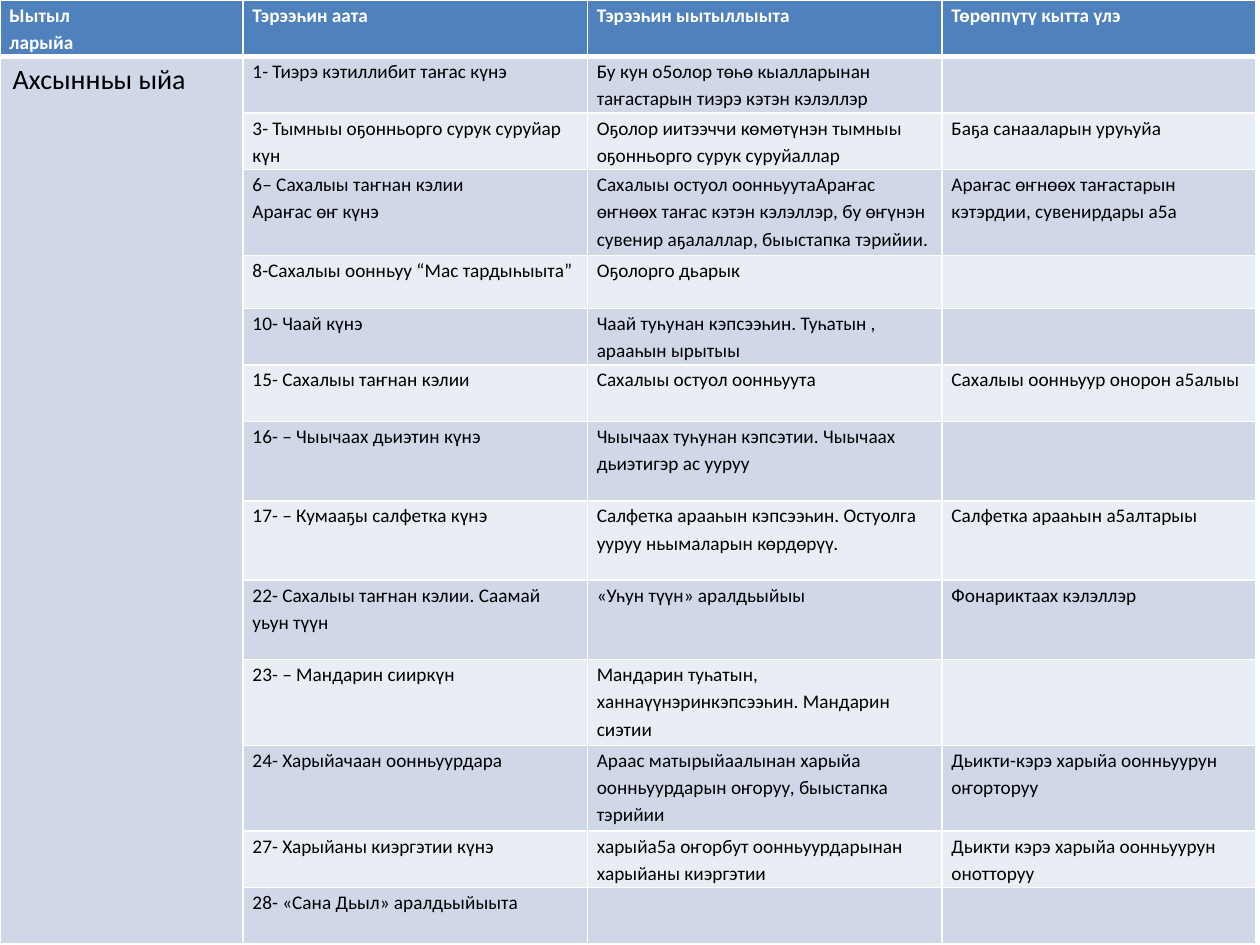
import pptx
import pptx.util
import pptx.dml.color
from lxml import etree
from pptx.oxml.ns import qn

Cm, Pt = pptx.util.Cm, pptx.util.Pt
RGB = pptx.dml.color.RGBColor

BLUE = RGB(0x4F, 0x81, 0xBD)
DARK = RGB(0xD0, 0xD8, 0xE8)
LIGHT = RGB(0xE9, 0xED, 0xF4)
WHITE = RGB(0xFF, 0xFF, 0xFF)
BLACK = RGB(0, 0, 0)

HEAD = ["Ыытыл\nларыйа", "Тэрээһин аата", "Тэрээһин ыытыллыыта", "Төрөппүтү кытта үлэ"]
MONTH = "Ахсынньы ыйа"
# name of the event, how it is held, work with parents
EVENTS = [
    ("1- Тиэрэ кэтиллибит таҥас күнэ",
     "Бу кун о5олор төһө кыалларынан таҥастарын тиэрэ кэтэн кэлэллэр", ""),
    ("3- Тымныы оҕонньорго сурук суруйар күн",
     "Оҕолор иитээччи көмөтүнэн тымныы оҕонньорго сурук суруйаллар",
     "Баҕа санааларын уруһуйа"),
    ("6– Сахалыы таҥнан кэлии\nАраҥас өҥ күнэ",
     "Сахалыы остуол оонньуутаАраҥас өҥнөөх таҥас кэтэн кэлэллэр, "
     "бу өҥүнэн сувенир аҕалаллар, быыстапка тэрийии.",
     "Араҥас өҥнөөх таҥастарын кэтэрдии, сувенирдары а5а"),
    ("8-Сахалыы оонньуу “Мас тардыһыыта”", "Оҕолорго дьарык", ""),
    ("10- Чаай күнэ", "Чаай туһунан кэпсээһин. Туһатын , арааһын ырытыы", ""),
    ("15- Сахалыы таҥнан кэлии", "Сахалыы остуол оонньуута",
     "Сахалыы оонньуур онорон а5алыы"),
    ("16- – Чыычаах дьиэтин күнэ",
     "Чыычаах туһунан кэпсэтии. Чыычаах дьиэтигэр ас ууруу", ""),
    ("17- – Кумааҕы салфетка күнэ",
     "Салфетка арааһын кэпсээһин. Остуолга ууруу ньымаларын көрдөрүү.",
     "Салфетка арааһын а5алтарыы"),
    ("22- Сахалыы таҥнан кэлии. Саамай уьун түүн", "«Уһун түүн» аралдьыйыы",
     "Фонариктаах кэлэллэр"),
    ("23- – Мандарин сииркүн",
     "Мандарин туһатын, ханнаүүнэринкэпсээһин. Мандарин сиэтии", ""),
    ("24- Харыйачаан оонньуурдара",
     "Араас матырыйаалынан харыйа оонньуурдарын оҥоруу, быыстапка тэрийии",
     "Дьикти-кэрэ харыйа оонньуурун оҥорторуу"),
    ("27- Харыйаны киэргэтии күнэ",
     "харыйа5а оҥорбут оонньуурдарынан харыйаны киэргэтии",
     "Дьикти кэрэ харыйа оонньуурун онотторуу"),
    ("28- «Сана Дьыл» аралдьыйыыта", "", ""),
]
WIDTHS = [4.9, 6.94, 7.15, 6.33]
HEIGHTS = [1.14, 1.14, 1.14, 1.73, 1.07, 1.14, 1.14, 1.6, 1.6, 1.6, 1.73, 1.73, 1.14, 1.14]


def edge(cell, top, bottom):
    """Draw white cell borders; top and bottom are widths in points."""
    props = cell._tc.get_or_add_tcPr()
    for side, width in (("L", 1), ("R", 1), ("T", top), ("B", bottom)):
        line = etree.SubElement(props, qn("a:ln" + side), w=str(Pt(width)))
        fill = etree.SubElement(line, qn("a:solidFill"))
        etree.SubElement(fill, qn("a:srgbClr"), val=str(WHITE))


def paint(cell, color):
    cell.fill.solid()
    cell.fill.fore_color.rgb = color


def write(cell, text, size, color, bold=False, space=None):
    cell.text_frame.text = text
    for par in cell.text_frame.paragraphs:
        par.line_spacing = space
        for run in par.runs:
            font = run.font
            font.name, font.size, font.bold = "Calibri", Pt(size), bold
            font.color.rgb = color


def main():
    deck = pptx.Presentation()
    deck.slide_width, deck.slide_height = Cm(25.4), Cm(19.05)
    slide = deck.slides.add_slide(deck.slide_layouts[6])

    rows = [HEAD] + [("",) + event for event in EVENTS]
    table = slide.shapes.add_table(len(rows), len(HEAD), 0, 0,
                                   Cm(sum(WIDTHS)), Cm(sum(HEIGHTS))).table
    for col, width in zip(table.columns, WIDTHS):
        col.width = Cm(width)
    for row, height in zip(table.rows, HEIGHTS):
        row.height = Cm(height)

    for r, texts in enumerate(rows):
        head = r == 0
        shade = BLUE if head else DARK if r % 2 else LIGHT
        for c, text in enumerate(texts):
            cell = table.cell(r, c)
            edge(cell, 3 if r == 1 else 1, 3 if head else 1)
            paint(cell, shade if head or c else DARK)
            if text:
                cell.margin_left = cell.margin_right = Cm(0.19)
                cell.margin_top = cell.margin_bottom = 0
                write(cell, text, 11, WHITE if head else BLACK, head, 1.15)

    month = table.cell(1, 0)
    month.merge(table.cell(len(EVENTS), 0))
    write(month, MONTH, 16, BLACK)
    deck.save("out.pptx")


if __name__ == "__main__":
    main()
